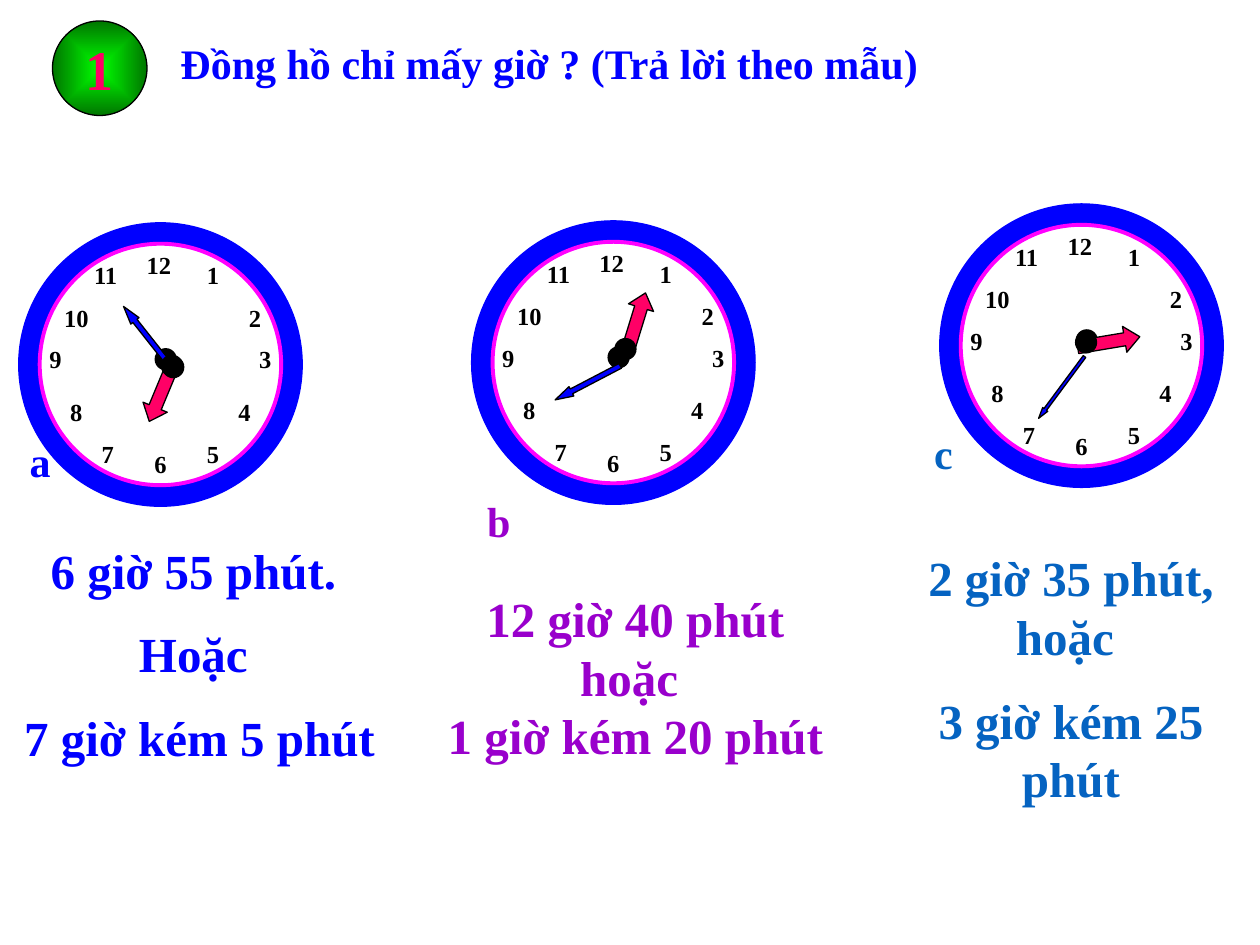
from lxml import etree
from pptx import Presentation
from pptx.dml.color import RGBColor
from pptx.enum.shapes import MSO_SHAPE
from pptx.enum.text import MSO_ANCHOR, PP_ALIGN
from pptx.oxml.ns import qn
from pptx.util import Pt

OVAL, ARROW = MSO_SHAPE.OVAL, MSO_SHAPE.RIGHT_ARROW
LEFT, CENTER = PP_ALIGN.LEFT, PP_ALIGN.CENTER
MIDDLE = MSO_ANCHOR.MIDDLE

BLACK = RGBColor(0x00, 0x00, 0x00)
WHITE = RGBColor(0xFF, 0xFF, 0xFF)
BLUE = RGBColor(0x00, 0x00, 0xFF)
MAGENTA = RGBColor(0xFF, 0x00, 0xFF)
PINK = RGBColor(0xFF, 0x00, 0x66)
PURPLE = RGBColor(0x99, 0x00, 0xCC)
SKY = RGBColor(0x05, 0x63, 0xC1)
BRIGHT_GREEN = RGBColor(0x00, 0xFF, 0x00)
DARK_GREEN = RGBColor(0x00, 0x76, 0x00)

FONT = "Times New Roman"
HUB_SIZE = 12

# Left and top of each numeral's box, measured from the clock's corner
NUMERALS = {
    12: (66, 12), 1: (96, 18), 2: (120, 42), 3: (126, 66),
    4: (114, 96), 5: (96, 120), 6: (66, 126), 7: (36, 120),
    8: (18, 96), 9: (6, 66), 10: (18, 42), 11: (36, 18),
}
CLOCK_CORNERS = [(10.7, 127.3), (269.5, 126.2), (537, 116.5)]


def format_text(text_frame, size, color, align=CENTER, space_before=0):
    for index, paragraph in enumerate(text_frame.paragraphs):
        paragraph.alignment = align
        paragraph.space_before = Pt(space_before if index else 0)
        for run in paragraph.runs:
            run.font.name = FONT
            run.font.size = Pt(size)
            run.font.bold = True
            run.font.color.rgb = color


def add_text(shapes, box, text, size, color, align=CENTER, space_before=0):
    text_box = shapes.add_textbox(*map(Pt, box))
    text_frame = text_box.text_frame
    text_frame.word_wrap = True
    text_frame.text = text
    format_text(text_frame, size, color, align, space_before)


def add_filled(shapes, kind, box, fill, line=BLACK, line_width=0.75):
    shape = shapes.add_shape(kind, *map(Pt, box))
    shape.shadow.inherit = False
    shape.fill.solid()
    shape.fill.fore_color.rgb = fill
    shape.line.color.rgb = line
    shape.line.width = Pt(line_width)
    return shape


def add_hub(shapes, left, top):
    add_filled(shapes, OVAL, (left, top, HUB_SIZE, HUB_SIZE), BLACK)


def add_hand(shapes, box, rotation, color, head_length):
    hand = add_filled(shapes, ARROW, box, color)
    hand.adjustments[0] = 0.5
    hand.adjustments[1] = head_length
    hand.rotation = rotation


def add_hour_hand(shapes, left, top, rotation):
    add_hand(shapes, (left, top, 36, 15), rotation, PINK, 0.585)


def add_minute_hand(shapes, left, top, rotation, length=42, thickness=6):
    add_hand(shapes, (left, top, length, thickness), rotation, BLUE, 1.75)


def add_clock(slide, left, top):
    shapes = slide.shapes.add_group_shape().shapes
    add_filled(shapes, OVAL, (left, top, 162, 162), BLUE, BLUE)
    add_filled(shapes, OVAL, (left + 12, top + 12, 138, 138), WHITE, MAGENTA, 2.25)
    add_hub(shapes, left + 78, top + 72)
    for number, (x, y) in NUMERALS.items():
        align = LEFT if number > 10 else CENTER
        add_text(shapes, (left + x, top + y, 30, 24), str(number), 14, BLACK, align)


def add_badge(shapes, box, text):
    badge = add_filled(shapes, OVAL, box, DARK_GREEN)
    badge.fill.gradient()
    stops = badge.fill.gradient_stops
    for stop, position, color in zip(stops, (0, 1), (BRIGHT_GREEN, DARK_GREEN)):
        stop.position = position
        stop.color.rgb = color
    # Turn the linear gradient into one that spreads from the centre
    gradient = badge.element.spPr.find(qn("a:gradFill"))
    linear = gradient.find(qn("a:lin"))
    if linear is not None:
        gradient.remove(linear)
    spread = etree.SubElement(gradient, qn("a:path"), {"path": "shape"})
    etree.SubElement(spread, qn("a:fillToRect"), dict.fromkeys("ltrb", "50000"))
    text_frame = badge.text_frame
    text_frame.word_wrap = False
    text_frame.vertical_anchor = MIDDLE
    text_frame.text = text
    format_text(text_frame, 32, PINK)


def main():
    presentation = Presentation()
    presentation.slide_width, presentation.slide_height = Pt(720), Pt(540)
    slide = presentation.slides.add_slide(presentation.slide_layouts[6])
    shapes = slide.shapes

    # Heading
    add_badge(shapes, (30, 12, 54, 54), "1")
    add_text(shapes, (96, 18, 456, 36), "Đồng hồ chỉ mấy giờ ? (Trả lời theo mẫu)",
             24, BLUE, LEFT)

    # Clock faces
    for left, top in CLOCK_CORNERS:
        add_clock(slide, left, top)

    # Hands of clock a
    add_hour_hand(shapes, 74.2, 216.7, 112.6)
    add_hub(shapes, 93, 203.8)
    add_minute_hand(shapes, 62.6, 188.6, 231.7)
    add_hub(shapes, 92.2, 203)

    # Hands of clock b
    add_hour_hand(shapes, 345.6, 177.1, 287.1)
    add_hub(shapes, 351.4, 193.5)
    add_minute_hand(shapes, 314.8, 215.8, 152.4)
    add_filled(shapes, OVAL, (351.4, 198, 3.6, 5), BLACK)

    # Hands of clock c
    add_hour_hand(shapes, 615.6, 187.9, 350.5)
    add_minute_hand(shapes, 584.6, 219.6, 126.6, 44, 3.6)
    add_hub(shapes, 614.6, 189.7)

    # Clock letters
    add_text(shapes, (7.9, 245.5, 30, 36), "a", 24, BLUE)
    add_text(shapes, (270, 279.4, 30, 36), "b", 24, PURPLE)
    add_text(shapes, (524.2, 240.5, 30, 36), "c", 24, SKY)

    # Answers
    add_text(shapes, (6, 305.3, 216, 143), "6 giờ 55 phút. \nHoặc \n7 giờ kém 5 phút",
             28, BLUE, space_before=14)
    add_text(shapes, (246, 332.6, 234, 109), "12 giờ 40 phút hoặc \n1 giờ kém 20 phút",
             28, PURPLE)
    add_text(shapes, (522, 309.6, 180, 160), "2 giờ 35 phút, hoặc \n3 giờ kém 25 phút",
             28, SKY, space_before=14)

    presentation.save("out.pptx")


if __name__ == "__main__":
    main()
